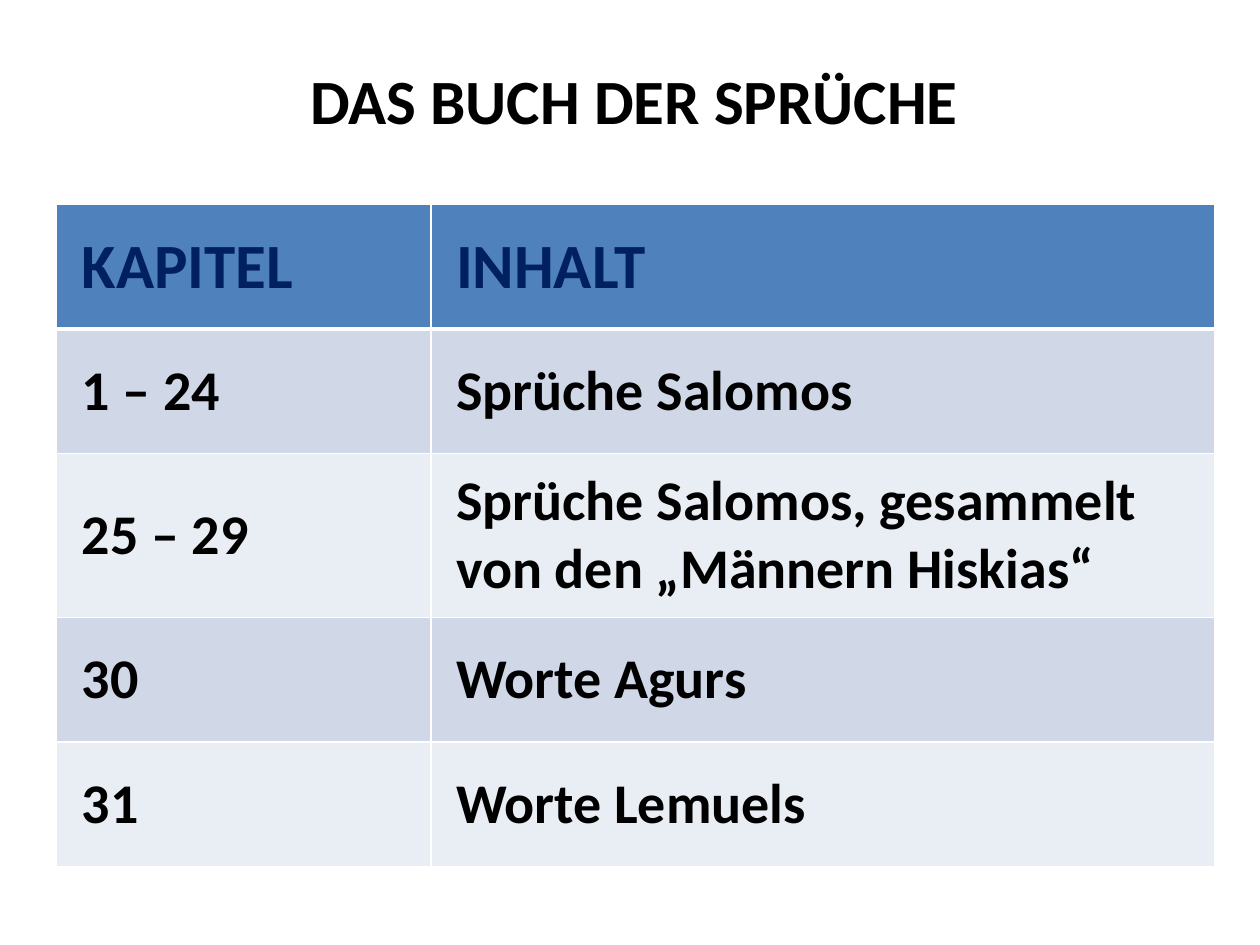
from lxml.etree import SubElement
from pptx import Presentation
from pptx.dml.color import RGBColor
from pptx.enum.text import MSO_ANCHOR as Anchor, MSO_AUTO_SIZE as Fit, PP_ALIGN as Align
from pptx.oxml.ns import qn
from pptx.util import Inches, Pt

# Content
TITLE = "DAS BUCH DER SPRÜCHE"
ROWS = [
    ("KAPITEL", "INHALT"),
    ("1 – 24", "Sprüche Salomos"),
    ("25 – 29", "Sprüche Salomos, gesammelt\vvon den „Männern Hiskias“"),
    ("30", "Worte Agurs"),
    ("31", "Worte Lemuels"),
]

# Format
WIDTHS = [2.97, 6.22]
LOW, TALL = 0.99, 1.3
HEAD = {"size": Pt(36), "color": "002060"}
BODY = {"size": Pt(32), "color": "000000"}
BANDS = ["E9EDF4", "D0D8E8"]


def paint(fill, color):
    fill.solid()
    fill.fore_color.rgb = RGBColor.from_string(color)


def style(font, color, **values):
    for name, value in {"name": "Calibri", "bold": True, **values}.items():
        setattr(font, name, value)
    paint(font.fill, color)


def rule(cell, sides):
    """Draw white cell borders; sides maps a tag to its width in points."""
    props = cell._tc.get_or_add_tcPr()
    for spot, (tag, width) in enumerate(sides.items()):
        line = SubElement(props, qn(f"a:{tag}"), w=str(Pt(width)))
        fill = SubElement(line, qn("a:solidFill"))
        SubElement(fill, qn("a:srgbClr"), val="FFFFFF")
        props.insert(spot, line)


deck = Presentation()
deck.slide_width, deck.slide_height = Inches(10), Inches(7.5)
slide = deck.slides.add_slide(deck.slide_layouts[5])

# Title
title = slide.shapes.title
box = {"left": 0.43, "top": 0.44, "width": 9.21, "height": 0.63}
for name, value in box.items():
    setattr(title, name, Inches(value))
paint(title.fill, "FFFFFF")
frame = title.text_frame
frame.text = TITLE
frame.auto_size = Fit.NONE
frame.vertical_anchor = Anchor.TOP
head = frame.paragraphs[0]
head.alignment = Align.CENTER
style(head.runs[0].font, "000000", size=Pt(36))

# Table
heights = [TALL if "\v" in text else LOW for _, text in ROWS]
table = slide.shapes.add_table(
    len(ROWS), len(WIDTHS), Inches(0.45), Inches(1.62),
    Inches(sum(WIDTHS)), Inches(sum(heights))).table
for col, width in zip(table.columns, WIDTHS):
    col.width = Inches(width)

for r, texts in enumerate(ROWS):
    table.rows[r].height = Inches(heights[r])
    for c, text in enumerate(texts):
        cell = table.cell(r, c)
        cell.text = text
        cell.vertical_anchor = Anchor.MIDDLE
        cell.margin_left = Inches(0.2)
        paint(cell.fill, BANDS[r % 2] if r else "4F81BD")
        rule(cell, {"lnL": 1, "lnR": 1, "lnT": 3 if r == 1 else 1,
                    "lnB": 1 if r else 3})
        for run in cell.text_frame.paragraphs[0].runs:
            style(run.font, **(BODY if r else HEAD))

deck.save("out.pptx")
